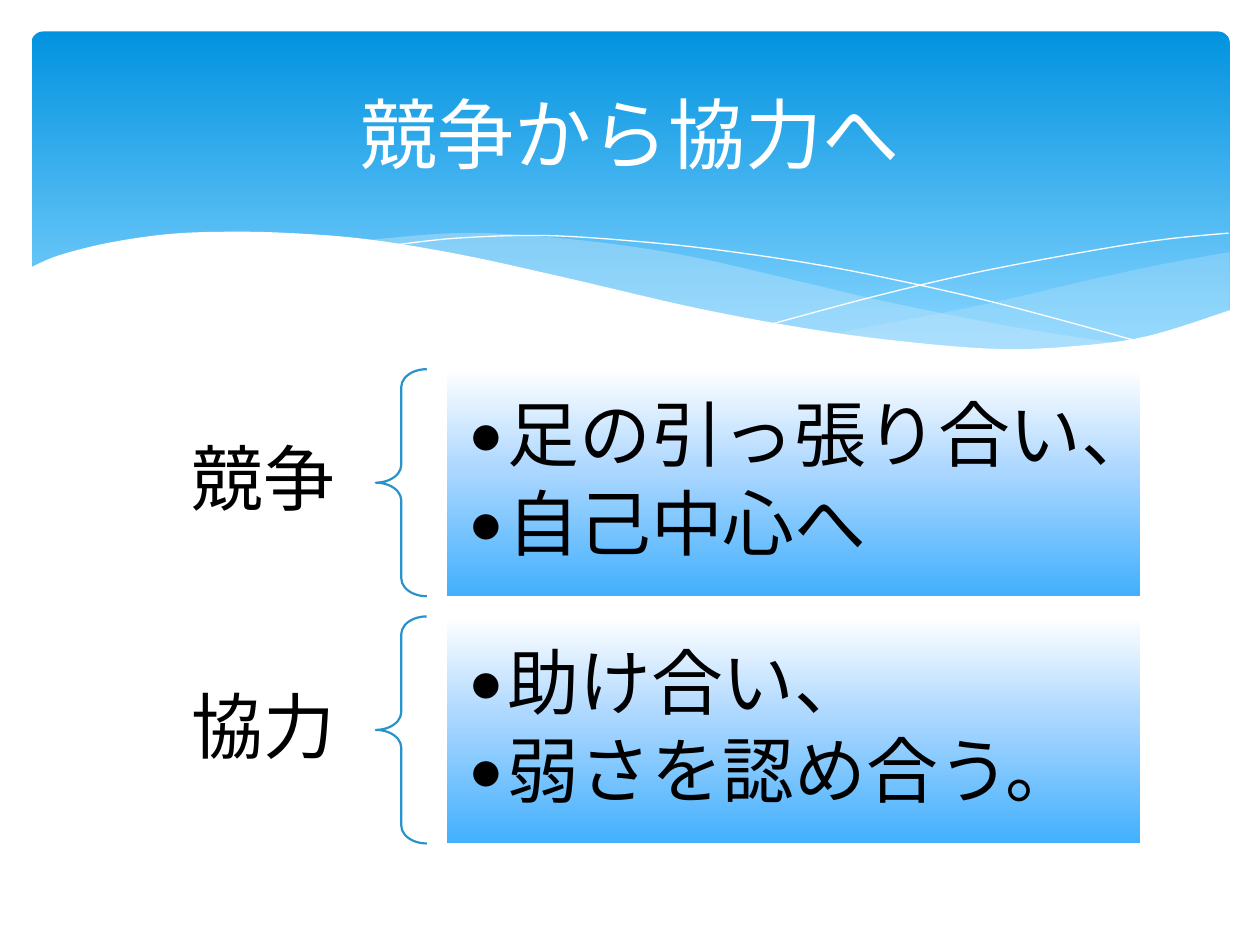
from dataclasses import dataclass

from lxml.etree import SubElement
from pptx import Presentation
from pptx.dml.color import RGBColor
from pptx.enum.lang import MSO_LANGUAGE_ID
from pptx.enum.shapes import MSO_SHAPE
from pptx.enum.text import MSO_ANCHOR, PP_ALIGN
from pptx.oxml.ns import qn
from pptx.util import Inches, Pt

CELL = Inches(0.1)
COLUMNS, ROWS = 100, 75
FONT = "Calibri"
TITLE_SIZE, TOPIC_SIZE = 44, 41
CURVE_STEPS = 8

WHITE = RGBColor(0xFF, 0xFF, 0xFF)
BLACK = RGBColor(0, 0, 0)
BRACE_BLUE = RGBColor(0x27, 0x92, 0xCB)
WAVE_BLUE = RGBColor(0xC6, 0xE7, 0xFC)
BAND_STOPS = [(0, RGBColor(0x02, 0x93, 0xE0)), (90, RGBColor(0x83, 0xD3, 0xFE))]
PANEL_STOPS = [(0, WHITE), (44, RGBColor(0xAC, 0xD7, 0xFF)), (100, RGBColor(0x42, 0xB0, 0xFD))]

RIGHT_CREST = [(95.1, 17.5), (89.6, 18.5), (83.6, 19.8), (75.4, 21.7), (63.6, 24)]
RIGHT_TROUGH = [(63.6, 24), (70.7, 24.9), (77.8, 25.3), (84.7, 24.9), (90.3, 23.8), (95.1, 22.2)]
LONG_CREST = [(86.8, 24.8), (78.2, 23.5), (68.1, 21.5), (60.4, 19.7), (53, 18),
              (46.4, 16.9), (39.5, 16.2), (33.6, 16), (26.1, 16.6)]
LONG_TROUGH = [(26.1, 16.6), (33.7, 17.8), (42.4, 19.7), (54.1, 22.3), (64, 24.1),
               (72.3, 25.1), (79.3, 25.3), (86.8, 24.8)]
FALLING_LINE = [(28.4, 17), (33.8, 16.4), (40.8, 16.2), (48.5, 16.7), (55.7, 17.5),
                (64, 18.8), (73.5, 20.8), (80.6, 22.6), (88.2, 24.7)]
RISING_LINE = [(58.8, 23.2), (67, 21), (75.1, 19.1), (84.1, 17.4), (89.9, 16.5), (95, 16)]
PAPER_EDGE = [(95.2, 22.1), (88.5, 24.2), (82.5, 25), (76.8, 25.2), (70.1, 24.7), (62.3, 23.7),
              (53, 22), (42.2, 19.5), (34, 17.7), (26.7, 16.5), (20.5, 16), (15.2, 15.9),
              (10.7, 16.1), (6, 16.8), (2.1, 17.8), (-0.2, 18.8)]
PAPER_BASE = [(-0.2, 30.4), (95.2, 30.4)]

TITLE = "競争から協力へ"
TOPICS = [("競争", ["足の引っ張り合い、", "自己中心へ"]),
          ("協力", ["助け合い、", "弱さを認め合う。"])]


@dataclass
class Box:
    """A rectangle in grid columns and rows."""
    left: float
    top: float
    width: float
    height: float

    def emu(self):
        """Return left, top, width and height in slide units."""
        return [round(length * CELL) for length in (self.left, self.top, self.width, self.height)]

    def slice(self, start, end):
        """Return the part between two shares of the width."""
        return Box(self.left + start * self.width, self.top, (end - start) * self.width, self.height)

    def row(self, index, count, gap):
        """Return one of several equal rows with gaps between them."""
        height = (self.height - gap * (count - 1)) / count
        return Box(self.left, self.top + index * (height + gap), self.width, height)


def spline(before, start, end, after, t):
    """Return the Catmull-Rom value at share t between start and end."""
    slope = end - before
    bend = 2 * before - 5 * start + 4 * end - after
    twist = 3 * start - before - 3 * end + after
    return start + (slope * t + bend * t ** 2 + twist * t ** 3) / 2


def smooth(points):
    """Return many points along a smooth curve through a few."""
    padded = [points[0], *points, points[-1]]
    curve = [points[0]]
    for four_points in zip(padded, padded[1:], padded[2:], padded[3:]):
        for step in range(1, CURVE_STEPS + 1):
            curve.append(tuple(spline(*axis, step / CURVE_STEPS) for axis in zip(*four_points)))
    return curve


def fill_gradient(shape, stops):
    """Fill a shape from top to bottom with the given percent stops."""
    shape.fill.gradient()
    shape.fill.gradient_angle = 270
    stop_list = shape._element.spPr.find(qn("a:gradFill")).find(qn("a:gsLst"))
    for old_stop in list(stop_list):
        stop_list.remove(old_stop)
    for percent, colour in stops:
        stop = SubElement(stop_list, qn("a:gs"), pos=str(percent * 1000))
        SubElement(stop, qn("a:srgbClr"), val=str(colour))


def add_preset(page, kind, box):
    """Add a preset shape without shadow or outline."""
    shape = page.shapes.add_shape(kind, *box.emu())
    shape.shadow.inherit = False
    shape.line.fill.background()
    return shape


def add_outline(page, box, points, closed):
    """Add a freeform whose points are measured from the corner of the box."""
    start, *others = [(round((box.left + x) * CELL), round((box.top + y) * CELL)) for x, y in points]
    builder = page.shapes.build_freeform(*start)
    builder.add_line_segments(others, close=closed)
    shape = builder.convert_to_shape()
    shape.shadow.inherit = False
    return shape


def add_wave(page, box, points, colour, opacity):
    """Add a filled wave with the given opacity in percent."""
    wave = add_outline(page, box, points, True)
    wave.line.fill.background()
    wave.fill.solid()
    wave.fill.fore_color.rgb = colour
    colour_node = wave._element.spPr.find(qn("a:solidFill"))[0]
    SubElement(colour_node, qn("a:alpha"), val=str(opacity * 1000))


def add_hairline(page, box, points):
    """Add a thin white curve."""
    curve = add_outline(page, box, smooth(points), False)
    curve.fill.background()
    curve.line.color.rgb = WHITE
    curve.line.width = 0


def add_header(page, box):
    """Draw the blue band and the waves along its lower edge."""
    band = add_preset(page, MSO_SHAPE.ROUNDED_RECTANGLE, box)
    band.adjustments[0] = 0.034
    fill_gradient(band, BAND_STOPS)
    for crest, trough, opacity in ((RIGHT_CREST, RIGHT_TROUGH, 29), (LONG_CREST, LONG_TROUGH, 40)):
        add_wave(page, box, smooth(crest) + smooth(trough), WAVE_BLUE, opacity)
    for points in (FALLING_LINE, RISING_LINE):
        add_hairline(page, box, points)
    add_wave(page, box, smooth(PAPER_EDGE) + PAPER_BASE, WHITE, 100)


def format_para(para, size, colour):
    """Set the font of every run in a paragraph."""
    for span in para.runs:
        span.font.name = FONT
        span.font.size = Pt(size)
        span.font.color.rgb = colour
        span.font.language_id = MSO_LANGUAGE_ID.JAPANESE


def add_text(page, box, lines, side_inset, end_inset, space_after):
    """Add a middle-anchored text box and return its paragraphs."""
    frame = page.shapes.add_textbox(*box.emu()).text_frame
    frame.word_wrap = True
    frame.vertical_anchor = MSO_ANCHOR.MIDDLE
    frame.margin_left = frame.margin_right = Inches(side_inset)
    frame.margin_top = frame.margin_bottom = Inches(end_inset)
    frame.text = "\n".join(lines)
    for para in frame.paragraphs:
        para.line_spacing = 0.9
        spacing = SubElement(para._p.get_or_add_pPr(), qn("a:spcAft"))
        SubElement(spacing, qn("a:spcPct"), val=str(space_after * 1000))
        format_para(para, TOPIC_SIZE, BLACK)
    return frame.paragraphs


def add_bullet(para):
    """Give a paragraph a hanging round bullet."""
    properties = para._p.get_or_add_pPr()
    properties.set("marL", str(Inches(0.31)))
    properties.set("indent", str(-Inches(0.31)))
    SubElement(properties, qn("a:buFont"), typeface=FONT)
    SubElement(properties, qn("a:buChar"), char="•")


def add_topic(page, box, label, points):
    """Place a label, a brace and a panel of bullets side by side."""
    label_box, brace_box, panel_box = box.slice(0, 0.25), box.slice(0.25, 0.3), box.slice(0.32, 1)
    add_text(page, label_box, [label], 0.32, 0.11, 35)[0].alignment = PP_ALIGN.RIGHT
    brace = add_preset(page, MSO_SHAPE.LEFT_BRACE, brace_box)
    brace.adjustments[0] = 0.35
    brace.fill.background()
    brace.line.color.rgb = BRACE_BLUE
    brace.line.width = Pt(1.25)
    fill_gradient(add_preset(page, MSO_SHAPE.RECTANGLE, panel_box), PANEL_STOPS)
    for para in add_text(page, panel_box, points, 0.17, 0.17, 15):
        add_bullet(para)


def place_title(page, box):
    """Move the title placeholder in front of the band and format it."""
    title = page.shapes.title
    title.left, title.top, title.width, title.height = box.emu()
    title.text_frame.text = TITLE
    title.text_frame.vertical_anchor = MSO_ANCHOR.MIDDLE
    para = title.text_frame.paragraphs[0]
    para.alignment = PP_ALIGN.CENTER
    format_para(para, TITLE_SIZE, WHITE)
    page.shapes._spTree.append(title._element)


def main():
    """Build the slide and save the deck."""
    deck = Presentation()
    deck.slide_width, deck.slide_height = COLUMNS * CELL, ROWS * CELL
    page = deck.slides.add_slide(deck.slide_layouts[5])
    add_header(page, Box(2.5, 2.5, 95.1, 27))
    body = Box(9.6, 29.3, 80.9, 37.64)
    for index, (label, points) in enumerate(TOPICS):
        add_topic(page, body.row(index, len(TOPICS), 1.6), label, points)
    place_title(page, Box(5, 3.7, 90, 13.7))
    deck.save("out.pptx")


if __name__ == "__main__":
    main()
